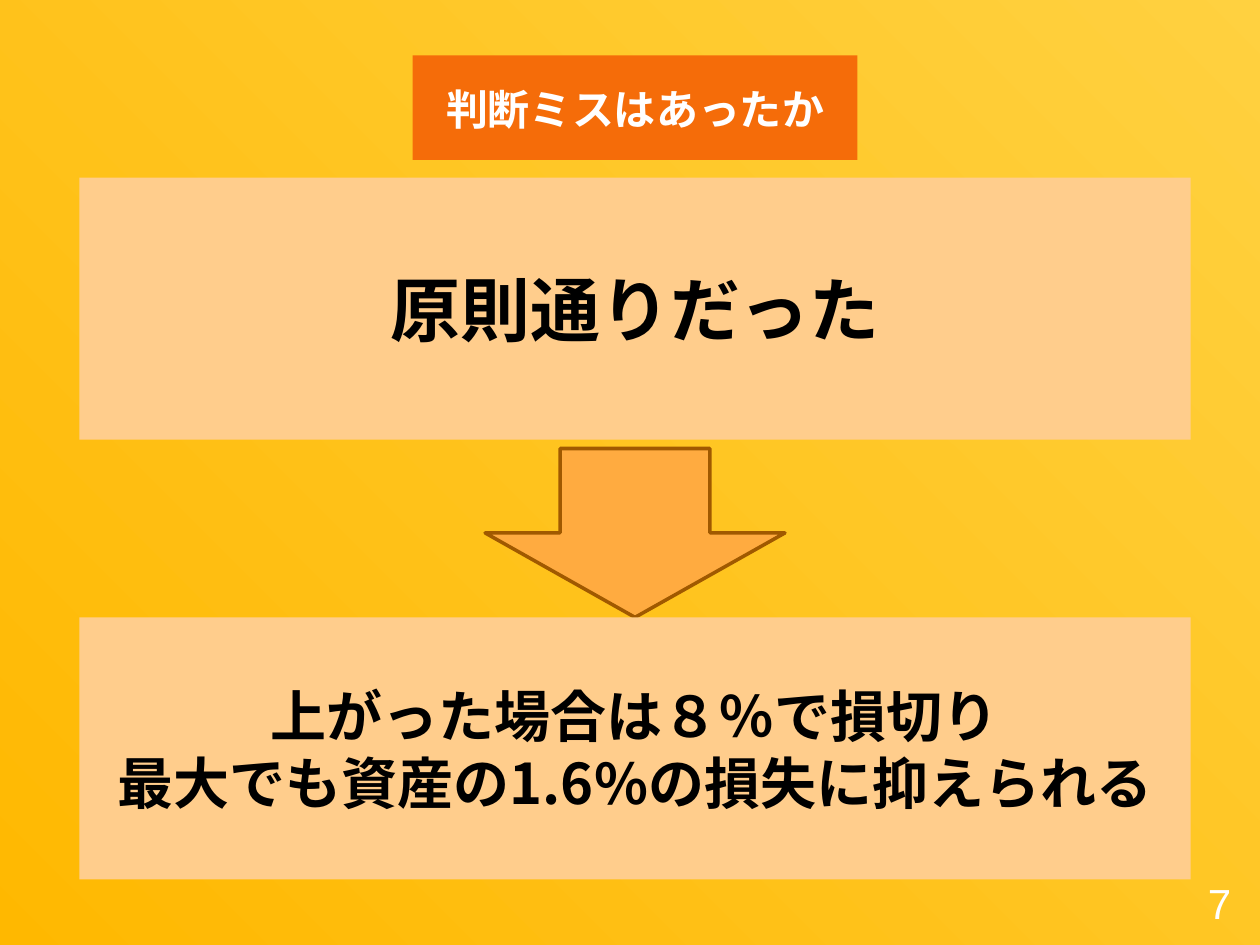
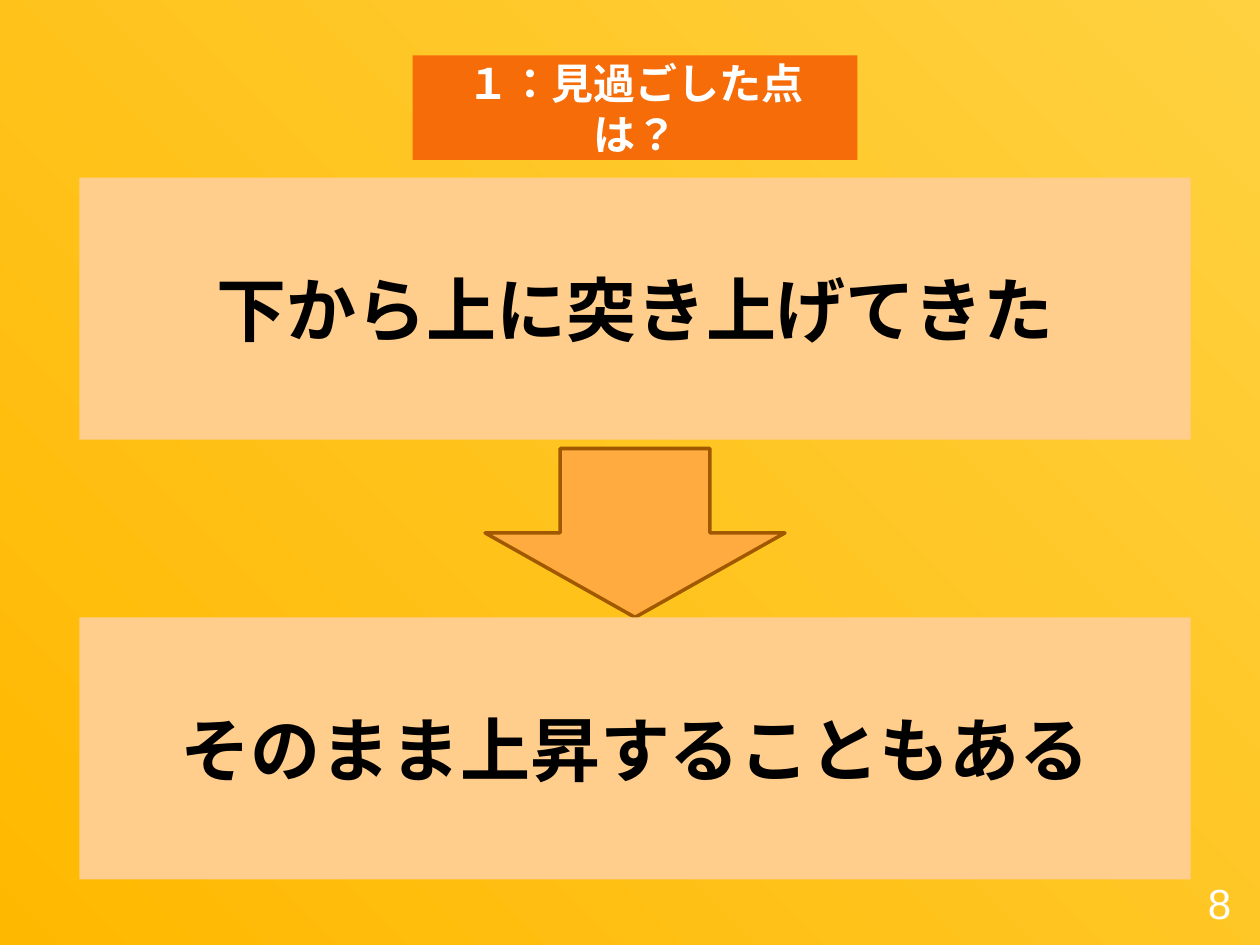
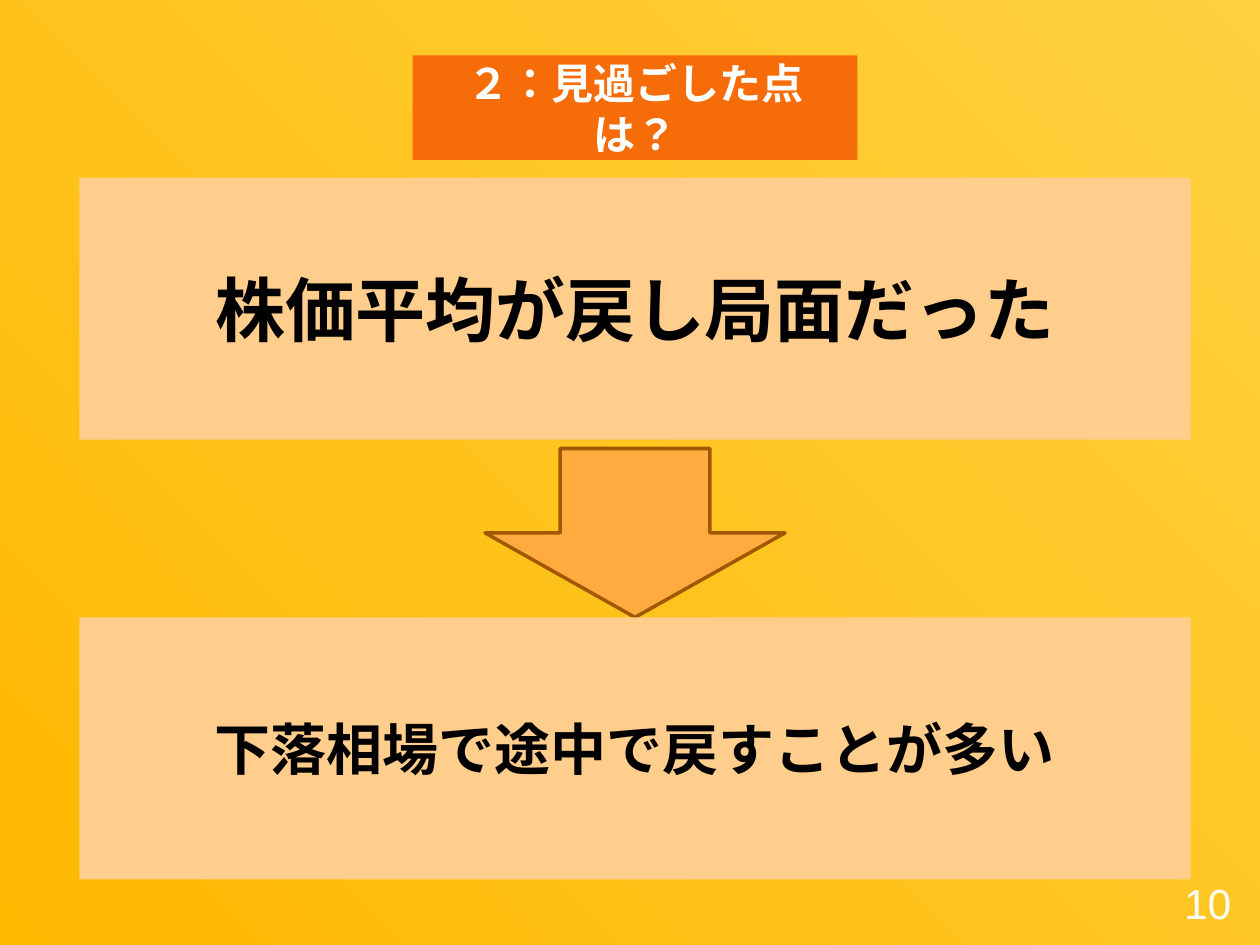
from dataclasses import dataclass

from lxml import etree
from pptx import Presentation
from pptx.dml.color import RGBColor
from pptx.enum.lang import MSO_LANGUAGE_ID
from pptx.enum.shapes import MSO_SHAPE
from pptx.enum.text import MSO_ANCHOR, PP_ALIGN
from pptx.oxml.ns import qn
from pptx.util import Inches, Pt

RECT, DOWN_ARROW = MSO_SHAPE.RECTANGLE, MSO_SHAPE.DOWN_ARROW
MIDDLE = MSO_ANCHOR.MIDDLE
CENTER, RIGHT = PP_ALIGN.CENTER, PP_ALIGN.RIGHT
JAPANESE = MSO_LANGUAGE_ID.JAPANESE


@dataclass(frozen=True)
class Theme:
    back_start: str = "FFD140"
    back_end: str = "FFB800"
    white: str = "FFFFFF"
    text: str = "000000"
    banner: str = "F56C09"
    panel: str = "FFCD8C"
    arrow: str = "FFAB40"
    arrow_line: str = "A05900"
    body_font: str = "Noto Sans CJK JP"
    label_font: str = "Arial"
    label_size: int = 24
    medium: int = 32
    large: int = 40


@dataclass(frozen=True)
class Box:
    left: float
    top: float
    width: float
    height: float

    def emu(self) -> tuple:
        return tuple(Inches(v) for v in (self.left, self.top, self.width, self.height))


@dataclass(frozen=True)
class TextStyle:
    font: str
    size: int
    color: str
    bold: bool = True
    align: PP_ALIGN = CENTER


@dataclass(frozen=True)
class Page:
    number: int
    title: str
    finding: str
    lesson: str
    lesson_size: int


T = Theme()
WIDTH, HEIGHT = 10, 7.5
PANEL_LEFT, PANEL_WIDTH, PANEL_HEIGHT = 0.63, 8.82, 2.08
AXIS = PANEL_LEFT + PANEL_WIDTH / 2
FINDING_TOP, LESSON_TOP = 1.41, 4.9
ARROW_HEIGHT = 1.34


def on_axis(top: float, width: float, height: float) -> Box:
    """Box centred on the vertical axis of the panels."""
    return Box(AXIS - width / 2, top, width, height)


BACK = Box(-0.05, -0.07, WIDTH + 0.1, HEIGHT + 0.11)
BANNER = on_axis(0.44, 3.53, 0.83)
TITLE = on_axis(0.51, 3.34, 0.7)
FINDING = on_axis(FINDING_TOP, PANEL_WIDTH, PANEL_HEIGHT)
ARROW = on_axis(LESSON_TOP - ARROW_HEIGHT, 2.38, ARROW_HEIGHT)
LESSON = on_axis(LESSON_TOP, PANEL_WIDTH, PANEL_HEIGHT)
NUMBER = Box(9.27, 6.88, 0.6, 0.57)

TITLE_STYLE = TextStyle(T.label_font, T.label_size, T.white)
NUMBER_STYLE = TextStyle(T.label_font, T.label_size, T.white, False, RIGHT)

PAGES = [
    Page(7, "判断ミスはあったか", "原則通りだった",
         "上がった場合は８％で損切り\n最大でも資産の1.6%の損失に抑えられる", T.medium),
    Page(8, "１：見過ごした点は？", "下から上に突き上げてきた",
         "そのまま上昇することもある", T.large),
    Page(10, "２：見過ごした点は？", "株価平均が戻し局面だった",
         "下落相場で途中で戻すことが多い", T.medium),
]


def rgb(color: str) -> RGBColor:
    return RGBColor.from_string(color)


def write(sp, text: str, style: TextStyle, inset: float = 0.05) -> None:
    """Fill a shape with text; inset is the top and bottom margin in inches."""
    tf = sp.text_frame
    tf.word_wrap = True
    tf.vertical_anchor = MIDDLE
    tf.margin_left = tf.margin_right = Inches(0.1)
    tf.margin_top = tf.margin_bottom = Inches(inset)
    tf.text = text
    for p in tf.paragraphs:
        p.alignment = style.align
        for r in p.runs:
            r.font.size = Pt(style.size)
            r.font.bold = style.bold
            r.font.color.rgb = rgb(style.color)
            r.font.name = style.font
            r.font.language_id = JAPANESE
            east_asian = etree.SubElement(r.font._element, qn("a:ea"))
            east_asian.set("typeface", T.body_font)


def add_solid(s, box: Box, color: str, kind: MSO_SHAPE = RECT):
    sp = s.shapes.add_shape(kind, *box.emu())
    sp.shadow.inherit = False
    sp.fill.solid()
    sp.fill.fore_color.rgb = rgb(color)
    sp.line.fill.background()
    return sp


def set_line(sp, color: str, width: float) -> None:
    sp.line.color.rgb = rgb(color)
    sp.line.width = Pt(width)


def add_backdrop(s) -> None:
    sp = add_solid(s, BACK, T.back_start)
    sp.fill.gradient()
    sp.fill.gradient_angle = 225
    for stop, color in zip(sp.fill.gradient_stops, (T.back_start, T.back_end)):
        stop.color.rgb = rgb(color)
    set_line(sp, T.white, 0.75)


def add_panel(s, box: Box, text: str, size: int) -> None:
    write(add_solid(s, box, T.panel), text, TextStyle(T.body_font, size, T.text))


def add_page(prs, page: Page) -> None:
    s = prs.slides.add_slide(prs.slide_layouts[6])
    add_backdrop(s)
    add_panel(s, FINDING, page.finding, T.large)
    write(s.shapes.add_textbox(*NUMBER.emu()), str(page.number), NUMBER_STYLE, 0.1)
    add_solid(s, BANNER, T.banner)
    write(s.shapes.add_textbox(*TITLE.emu()), page.title, TITLE_STYLE)
    set_line(add_solid(s, ARROW, T.arrow, DOWN_ARROW), T.arrow_line, 2)
    add_panel(s, LESSON, page.lesson, page.lesson_size)


def main() -> None:
    prs = Presentation()
    prs.slide_width, prs.slide_height = Inches(WIDTH), Inches(HEIGHT)
    for page in PAGES:
        add_page(prs, page)
    prs.save("out.pptx")


if __name__ == "__main__":
    main()
